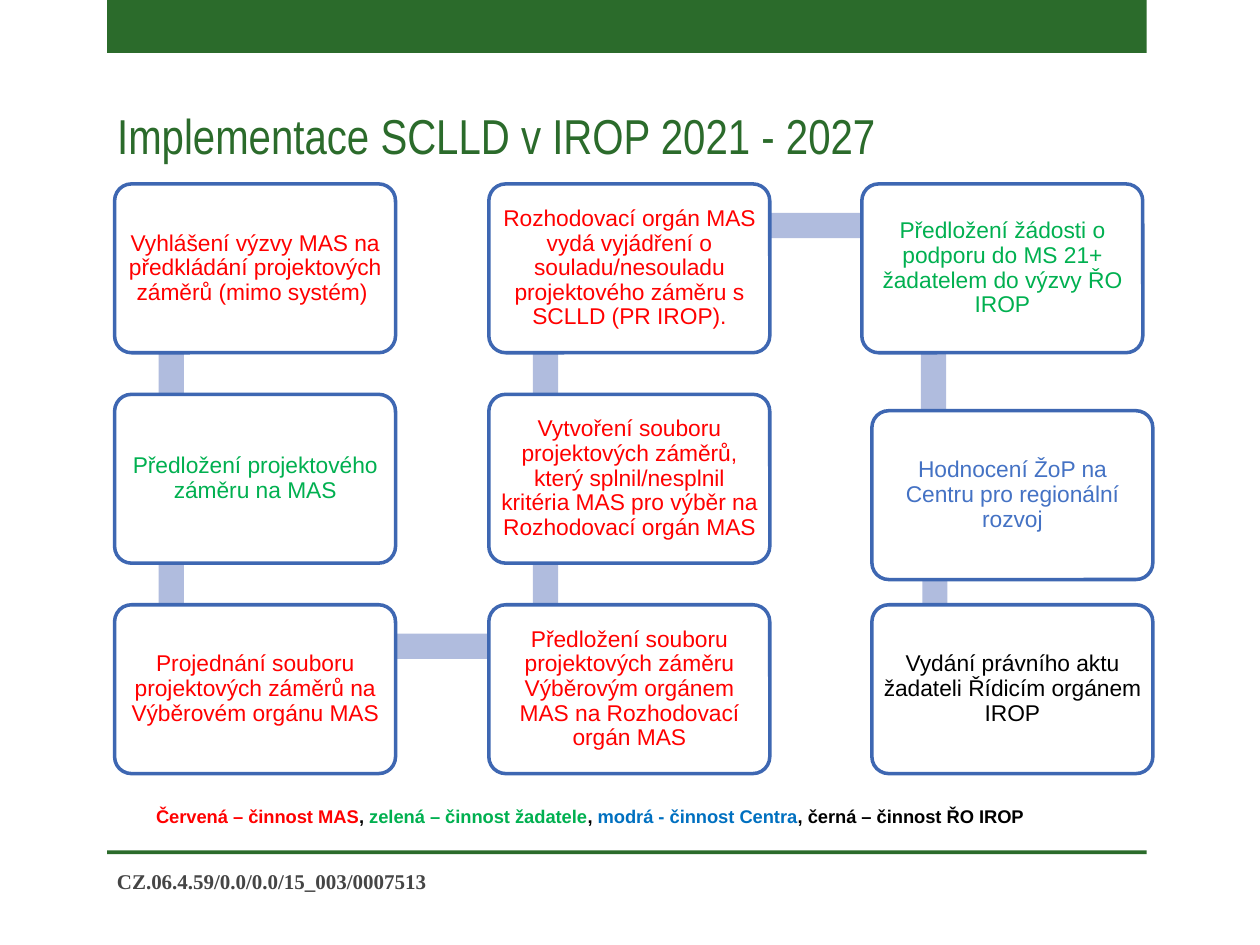
from pptx import Presentation, util as u
from pptx.dml.color import RGBColor
from pptx.enum import shapes, text

PX = 9144
COLORS = {
    "green_dark": "2B6B2B", "bar": "B0BCDE", "border": "3E67B2",
    "white": "FFFFFF", "black": "000000", "gray": "454545",
    "red": "FF0000", "green": "00B050", "blue": "4472C4", "blue_key": "0070C0",
}


def add_block(kind, box, fill):
    block = slide.shapes.add_shape(kind, *(value * PX for value in box))
    block.shadow.inherit = False
    block.fill.solid()
    block.fill.fore_color.rgb = RGBColor.from_string(COLORS[fill])
    block.line.fill.background()
    return block


def add_run(paragraph, words, color, **formats):
    run = paragraph.add_run()
    run.text = words
    run.font.color.rgb = RGBColor.from_string(COLORS[color])
    for name, value in formats.items():
        setattr(run.font, name, value)


presentation = Presentation()
presentation.slide_width = 1000 * PX
presentation.slide_height = 750 * PX
slide = presentation.slides.add_slide(presentation.slide_layouts[5])

for band in [(85, 0, 825, 42), (85, 675, 825, 3)]:
    add_block(shapes.MSO_SHAPE.RECTANGLE, band, "green_dark")

title = slide.shapes.title
title.left, title.top, title.width, title.height = (value * PX for value in (83, 75, 825, 64))
frame_format = {
    "auto_size": text.MSO_AUTO_SIZE.NONE,
    "vertical_anchor": text.MSO_ANCHOR.MIDDLE,
    "word_wrap": True,
}
for name, value in frame_format.items():
    setattr(title.text_frame, name, value)
paragraph = title.text_frame.paragraphs[0]
paragraph.alignment = text.PP_ALIGN.LEFT
add_run(paragraph, "Implementace SCLLD v IROP 2021 - 2027", "green_dark",
        name="Arial Narrow", size=u.Pt(28))

BOX_WIDTH, BOX_HEIGHT, BAR = 223, 134, 20
COLUMNS = [91, 388, 684]
ROWS = [146, 313, 480]

bars = [(left + 35, top + 33, BAR, 166) for left in COLUMNS[:2] for top in ROWS[:2]]
bars += [(731, 177, BAR, 180), (732, 360, BAR, 154)]
bars += [(137, 503, 296, BAR), (433, 169, 296, BAR)]
for bar in bars:
    add_block(shapes.MSO_SHAPE.RECTANGLE, bar, "bar")

steps = [
    (COLUMNS[0], ROWS[0], "red", "Vyhlášení výzvy MAS na předkládání projektových záměrů (mimo systém) "),
    (COLUMNS[0], ROWS[1], "green", "Předložení projektového záměru na MAS"),
    (COLUMNS[0], ROWS[2], "red", "Projednání souboru projektových záměrů na Výběrovém orgánu MAS"),
    (COLUMNS[1], ROWS[2], "red", "Předložení souboru projektových záměru Výběrovým orgánem MAS na Rozhodovací orgán MAS"),
    (COLUMNS[1], ROWS[1], "red", "Vytvoření souboru projektových záměrů, který splnil/nesplnil kritéria MAS pro výběr na Rozhodovací orgán MAS"),
    (COLUMNS[1], ROWS[0], "red", "Rozhodovací orgán MAS vydá vyjádření o souladu/nesouladu projektového záměru s SCLLD (PR IROP)."),
    (COLUMNS[2], ROWS[0], "green", "Předložení žádosti o podporu do MS 21+ žadatelem do výzvy ŘO IROP"),
    (COLUMNS[2] + 8, ROWS[1] + 13, "blue", "Hodnocení ŽoP na Centru pro regionální rozvoj"),
    (COLUMNS[2] + 8, ROWS[2], "black", "Vydání právního aktu žadateli Řídicím orgánem IROP"),
]
step_format = {
    "word_wrap": True,
    "vertical_anchor": text.MSO_ANCHOR.MIDDLE,
    "margin_left": 5 * PX,
    "margin_right": 5 * PX,
    "margin_top": 5 * PX,
    "margin_bottom": 5 * PX,
}
for left, top, color, words in steps:
    step = add_block(shapes.MSO_SHAPE.ROUNDED_RECTANGLE,
                     (left, top, BOX_WIDTH, BOX_HEIGHT), "white")
    step.adjustments[0] = 0.1
    step.line.color.rgb = RGBColor.from_string(COLORS["border"])
    step.line.width = u.Pt(2)
    for name, value in step_format.items():
        setattr(step.text_frame, name, value)
    paragraph = step.text_frame.paragraphs[0]
    paragraph.alignment = text.PP_ALIGN.CENTER
    paragraph.line_spacing = 0.9
    add_run(paragraph, words, color, name="Arial", size=u.Pt(13))

legend_parts = [
    ("Červená – činnost MAS", "red"), (", ", "black"),
    ("zelená – činnost žadatele", "green"), (", ", "black"),
    ("modrá - činnost Centra", "blue_key"), (", černá – činnost ŘO IROP", "black"),
]
project_parts = [("CZ.06.4.59/0.0/0.0/15_003/0007513", "gray")]
notes = [
    ((114, 634, 803, 28), text.MSO_ANCHOR.TOP, "Arial", 10.5, legend_parts),
    ((83, 679, 533, 40), text.MSO_ANCHOR.MIDDLE, "Times New Roman", 12, project_parts),
]
for box, anchor, font, size, parts in notes:
    frame = slide.shapes.add_textbox(*(value * PX for value in box)).text_frame
    frame.word_wrap = True
    frame.vertical_anchor = anchor
    for words, color in parts:
        add_run(frame.paragraphs[0], words, color, name=font, size=u.Pt(size), bold=True)

presentation.save("out.pptx")
